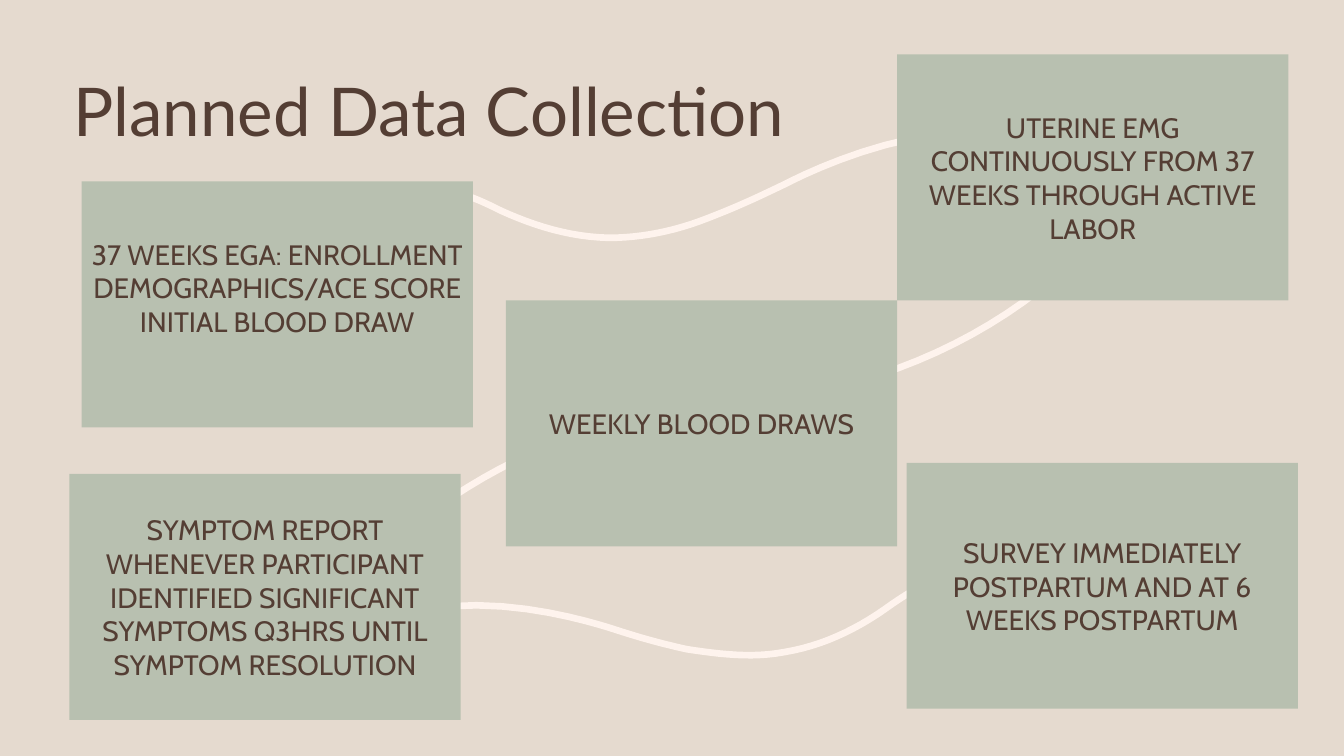
from pptx import Presentation
from pptx.dml import color
from pptx.enum import shapes, text
from pptx.util import Pt

COLORS = {"background": "E5DACF", "box": "B8C0B0", "curve": "FEF3ED", "text": "543E34"}
BOX_WIDTH, BOX_HEIGHT = 279.5, 175.7
INSET = 7.2
LINE_HEIGHT = 24
CURVE_STEPS = 12

# Each curve is a start point, then two control points and an end point per segment
CURVES = [
    [(599.8, 275.8), (657.4, 261.4), (709.2, 235.4), (753.8, 198)],
    [(420.5, 308.2), (366.5, 325.4), (320.4, 352.8), (280.1, 388.1)],
    [(221, 160.6), (252, 134.6), (286.6, 127.4), (323.3, 136.8),
     (335.5, 139.7), (346.3, 144.7), (357.8, 150.5),
     (381.6, 161.3), (406.8, 169.2), (434.9, 169.9),
     (458.6, 169.9), (482.4, 164.9), (504.7, 156.2),
     (530.6, 146.2), (545, 139), (560.2, 131.8),
     (576.7, 123.1), (676.8, 74.2), (739.4, 105.1)],
    [(662.4, 416.9), (650.9, 421.9), (641.5, 428.4), (631.4, 435.6),
     (610.6, 450), (586.8, 461.5), (560.2, 465.8),
     (537.1, 470.2), (514.1, 467.3), (490.3, 463.7),
     (464.4, 457.9), (449.3, 452.9), (433.4, 447.8),
     (416.2, 442.8), (312.5, 410.4), (249.8, 457.9)],
]

# Left, top, paragraphs, free lines below the text
BOXES = [
    (640.8, 38.9, ["UTERINE EMG CONTINUOUSLY FROM 37 WEEKS THROUGH ACTIVE LABOR"], 0),
    (58.3, 129.6, ["37 WEEKS EGA: ENROLLMENT", "DEMOGRAPHICS/ACE SCORE",
                   "INITIAL BLOOD DRAW"], 1),
    (361.4, 214.6, ["WEEKLY BLOOD DRAWS"], 0),
    (647.6, 330.6, ["SURVEY IMMEDIATELY POSTPARTUM AND AT 6 WEEKS POSTPARTUM"], 0),
    (49.5, 338.6, ["SYMPTOM REPORT WHENEVER PARTICIPANT IDENTIFIED SIGNIFICANT "
                   "SYMPTOMS Q3HRS UNTIL SYMPTOM RESOLUTION"], 0),
]


def rgb(name):
    return color.RGBColor.from_string(COLORS[name])


def write_text(shape, paragraphs, *, font, size, align, spacing=1.0, bottom=3.6):
    frame = shape.text_frame
    frame.word_wrap = True
    frame.vertical_anchor = text.MSO_ANCHOR.MIDDLE
    frame.margin_left = frame.margin_right = Pt(INSET)
    frame.margin_top, frame.margin_bottom = Pt(3.6), Pt(bottom)
    frame.text = "\n".join(paragraphs)
    for paragraph in frame.paragraphs:
        paragraph.alignment = align
        paragraph.line_spacing = spacing
        paragraph.font.name = font
        paragraph.font.size = Pt(size)
        paragraph.font.color.rgb = rgb("text")


def bezier_point(corners, t):
    weights = ((1 - t) ** 3, 3 * t * (1 - t) ** 2, 3 * t ** 2 * (1 - t), t ** 3)
    return tuple(Pt(sum(w * corner[axis] for w, corner in zip(weights, corners)))
                 for axis in (0, 1))


def add_curve(slide, points):
    vertices = [bezier_point(points[first:first + 4], step / CURVE_STEPS)
                for first in range(0, len(points) - 1, 3)
                for step in range(1, CURVE_STEPS + 1)]
    start_x, start_y = points[0]
    builder = slide.shapes.build_freeform(Pt(start_x), Pt(start_y))
    builder.add_line_segments(vertices, close=False)
    shape = builder.convert_to_shape()
    shape.shadow.inherit = False
    shape.fill.background()
    shape.line.color.rgb = rgb("curve")
    shape.line.width = Pt(4.75)


def add_box(slide, left, top, paragraphs, free_lines):
    shape = slide.shapes.add_shape(shapes.MSO_SHAPE.RECTANGLE, Pt(left), Pt(top),
                                   Pt(BOX_WIDTH), Pt(BOX_HEIGHT))
    shape.shadow.inherit = False
    shape.fill.solid()
    shape.fill.fore_color.rgb = rgb("box")
    shape.line.fill.background()
    write_text(shape, paragraphs, font="Cabin", size=20, align=text.PP_ALIGN.CENTER,
               bottom=3.6 + free_lines * LINE_HEIGHT)


def add_title(slide, title):
    shape = slide.shapes.add_textbox(Pt(45.4), Pt(55.4), Pt(828), Pt(53.3))
    write_text(shape, [title], font="Lato", size=48, align=text.PP_ALIGN.LEFT, spacing=0.9)


def main():
    presentation = Presentation()
    presentation.slide_width, presentation.slide_height = Pt(960), Pt(540)
    slide = presentation.slides.add_slide(presentation.slide_layouts[6])
    slide.background.fill.solid()
    slide.background.fill.fore_color.rgb = rgb("background")

    # Curves run behind the boxes
    for points in CURVES:
        add_curve(slide, points)

    # Data collection steps
    for box in BOXES:
        add_box(slide, *box)

    add_title(slide, "Planned Data Collection")
    presentation.save("out.pptx")


if __name__ == "__main__":
    main()
